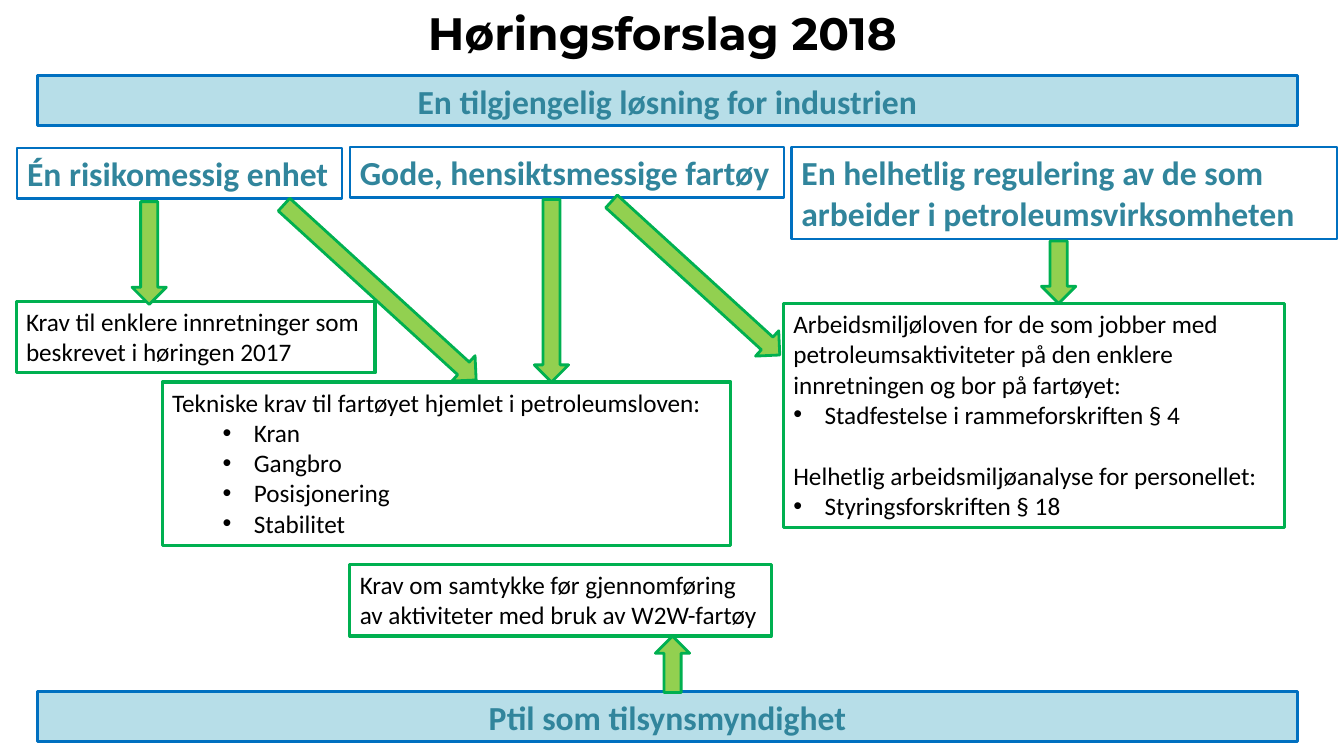
from dataclasses import dataclass

from lxml.etree import SubElement
from pptx import Presentation
from pptx.dml.color import RGBColor
from pptx.enum.shapes import MSO_SHAPE
from pptx.enum.text import MSO_ANCHOR, MSO_AUTO_SIZE as FIT, PP_ALIGN as AL
from pptx.oxml.ns import qn
from pptx.slide import Slide
from pptx.util import Inches, Pt

BLUE, GREEN = "0070C0", "00B050"
TEAL, PALE, LIME, BLACK = "31859C", "B7DEE8", "92D050", "000000"


@dataclass
class Para:
    text: str
    indent: float = 0
    before: float = 0


@dataclass
class Style:
    size: float
    color: str
    bold: bool = False
    font: str = "Calibri"
    align: AL = AL.LEFT
    line: str | None = None
    weight: float = 0
    fill: str | None = None


@dataclass
class Box:
    at: tuple[float, float, float, float]
    style: Style
    paras: list[Para]
    wrap: bool = True


@dataclass
class Arrow:
    left: float
    top: float
    height: float
    rotation: float = 0


TITLE = Style(32.4, BLACK, True, "Montserrat", AL.CENTER)
BANNER = Style(24, TEAL, True, align=AL.CENTER, line=BLUE, weight=2.25, fill=PALE)
GOAL = Style(24, TEAL, True, line=BLUE, weight=1.5)
RULE = Style(18, BLACK, line=GREEN, weight=2.25)

BOXES = [
    Box((0.58, 0.08, 11.98, 0.48), TITLE, [Para("Høringsforslag 2018")]),
    Box((3.47, 1.46, 4.31, 0.5), GOAL, [Para("Gode, hensiktsmessige fartøy")], False),
    Box((0.16, 2.99, 3.56, 0.71), RULE,
        [Para("Krav til enklere innretninger som beskrevet i høringen 2017")]),
    Box((7.77, 3.01, 4.97, 2.22), RULE, [
        Para("Arbeidsmiljøloven for de som jobber med petroleumsaktiviteter "
             "på den enklere innretningen og bor på fartøyet:"),
        Para("Stadfestelse i rammeforskriften § 4", 0.31),
        Para("Helhetlig arbeidsmiljøanalyse for personellet:", before=22),
        Para("Styringsforskriften § 18", 0.31),
    ]),
    Box((7.85, 1.46, 5.41, 0.91), GOAL,
        [Para("En helhetlig regulering av de som arbeider i petroleumsvirksomheten")]),
    Box((1.61, 3.79, 5.64, 1.62), RULE, [
        Para("Tekniske krav til fartøyet hjemlet i petroleumsloven:"),
        *(Para(t, 0.81) for t in ("Kran", "Gangbro", "Posisjonering", "Stabilitet")),
    ]),
    Box((0.17, 1.47, 3.22, 0.5), GOAL, [Para("Én risikomessig enhet")], False),
    Box((0.37, 6.86, 12.5, 0.5), BANNER, [Para("Ptil som tilsynsmyndighet")]),
    Box((0.37, 0.75, 12.5, 0.5), BANNER, [Para("En tilgjengelig løsning for industrien")]),
    Box((3.47, 5.6, 4.18, 0.71), RULE,
        [Para("Krav om samtykke før gjennomføring av aktiviteter med bruk av W2W-fartøy")]),
]

ARROWS = [
    Arrow(1.31, 2, 1.02),
    Arrow(5.3, 1.98, 1.81),
    Arrow(10.33, 2.39, 0.62),
    Arrow(6.5, 6.31, 0.56, 180),
    Arrow(3.6, 1.61, 2.58, 312.4),
    Arrow(6.73, 1.63, 2.26, 312.4),
]


def rgb(color: str) -> RGBColor:
    return RGBColor.from_string(color)


def paint(sp, fill: str | None, line: str | None, weight: float) -> None:
    if fill:
        sp.fill.solid()
        sp.fill.fore_color.rgb = rgb(fill)
    if line:
        sp.line.color.rgb = rgb(line)
        sp.line.width = Pt(weight)


def add_bullet(p, indent: float) -> None:
    pr = p._p.get_or_add_pPr()
    pr.set("marL", str(Inches(indent)))
    pr.set("indent", str(Inches(-0.31)))
    SubElement(pr, qn("a:buFont"), typeface="Arial")
    SubElement(pr, qn("a:buChar"), char="•")


def add_box(s: Slide, box: Box) -> None:
    sp = s.shapes.add_textbox(*map(Inches, box.at))
    st = box.style
    paint(sp, st.fill, st.line, st.weight)
    tf = sp.text_frame
    tf.word_wrap = box.wrap
    tf.auto_size = FIT.SHAPE_TO_FIT_TEXT if st.line else FIT.NONE
    tf.vertical_anchor = MSO_ANCHOR.TOP if st.line else MSO_ANCHOR.MIDDLE
    for i, para in enumerate(box.paras):
        p = tf.add_paragraph() if i else tf.paragraphs[0]
        p.text = para.text
        p.alignment = st.align
        if para.before:
            p.space_before = Pt(para.before)
        if para.indent:
            add_bullet(p, para.indent)
        p.font.name = st.font
        p.font.size = Pt(st.size)
        p.font.bold = st.bold
        p.font.color.rgb = rgb(st.color)


def add_arrow(s: Slide, arrow: Arrow) -> None:
    at = (arrow.left, arrow.top, 0.34, arrow.height)
    sp = s.shapes.add_shape(MSO_SHAPE.DOWN_ARROW, *map(Inches, at))
    sp.shadow.inherit = False
    sp.rotation = arrow.rotation
    paint(sp, LIME, GREEN, 2)


def main() -> None:
    prs = Presentation()
    prs.slide_width, prs.slide_height = Inches(13.33), Inches(7.5)
    s = prs.slides.add_slide(prs.slide_layouts[6])
    for box in BOXES:
        add_box(s, box)
    for arrow in ARROWS:
        add_arrow(s, arrow)
    prs.save("out.pptx")


if __name__ == "__main__":
    main()
